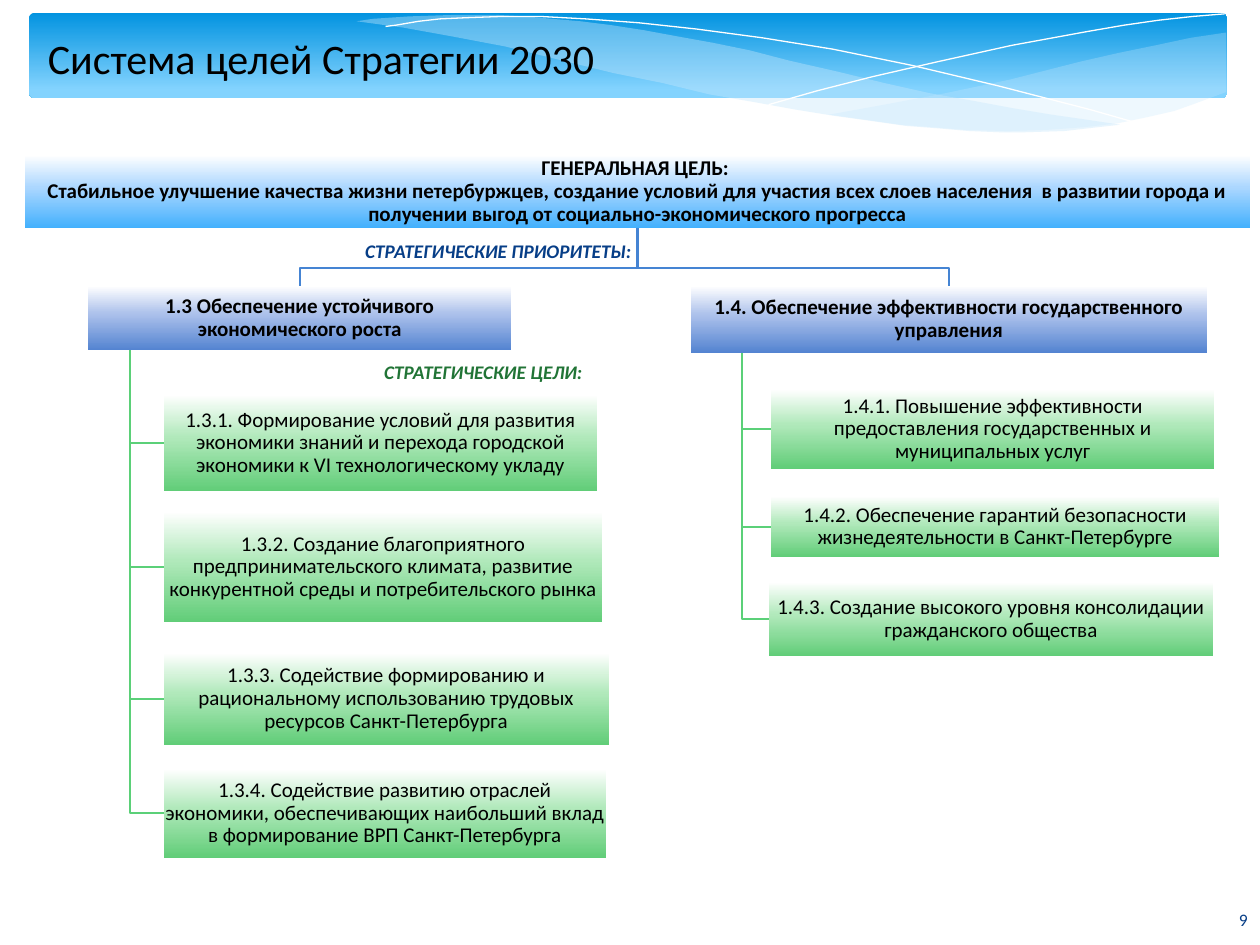
import pptx
import pptx.util
import pptx.oxml
import pptx.oxml.ns
import pptx.dml.color
import pptx.enum.shapes
import pptx.enum.text
import lxml.etree

Pt = pptx.util.Pt
color = pptx.dml.color.RGBColor.from_string
qn = pptx.oxml.ns.qn
ALIGN = pptx.enum.text.PP_ALIGN
ANCHOR = pptx.enum.text.MSO_ANCHOR
SHAPE = pptx.enum.shapes.MSO_SHAPE

presentation = pptx.Presentation()
presentation.slide_width = Pt(720)
presentation.slide_height = Pt(540)
slide = presentation.slides.add_slide(presentation.slide_layouts[6])


def add_outline(points, closed=False):
    corners = [(Pt(x), Pt(y)) for x, y in points]
    builder = slide.shapes.build_freeform(*corners[0])
    builder.add_line_segments(corners[1:], close=closed)
    shape = builder.convert_to_shape()
    shape.shadow.inherit = False
    shape.fill.background()
    shape.line.fill.background()
    return shape


def add_gradient_box(kind, box, stops):
    shape = slide.shapes.add_shape(kind, *[Pt(value) for value in box])
    shape.shadow.inherit = False
    shape.line.fill.background()
    shape.fill.gradient()
    shape.fill.gradient_angle = 270
    stop_list = shape._element.spPr.find(".//" + qn("a:gsLst"))
    for stop in list(stop_list):
        stop_list.remove(stop)
    for position, hex_color in stops:
        stop = lxml.etree.SubElement(stop_list, qn("a:gs"), pos=str(position * 1000))
        lxml.etree.SubElement(stop, qn("a:srgbClr"), val=hex_color)
    return shape


header = add_gradient_box(SHAPE.ROUNDED_RECTANGLE, (16.6, 7.2, 684.7, 49),
                          [(0, "0293E0"), (90, "83D3FE")])
header.adjustments[0] = 0.07

right_wave = [
    (699.8, 18.7), (680.4, 21.6), (660.2, 25.9), (639.4, 30.2), (617, 35.3), (577.4, 45.4),
    (540, 53.3), (505.4, 59.8), (473.8, 65.5), (494.6, 68.4), (514.8, 71.3), (533.5, 72.7),
    (551.5, 74.2), (576, 74.9), (598.3, 74.2), (619.2, 72.7), (637.9, 70.6), (655.2, 67),
    (671, 63.4), (681.1, 59.8), (700.6, 52.6), (700.6, 18.7)]
long_wave = [
    (640, 71.3), (620.6, 68.4), (600.5, 65.5), (578.9, 61.9), (555.8, 57.6), (531.4, 53.3),
    (505.4, 47.5), (478.8, 41), (450.7, 34.6), (428.4, 28.8), (407.5, 24.5), (387.4, 20.9),
    (367.9, 17.3), (349.2, 14.4), (331.9, 12.2), (315.4, 10.8), (300.2, 9.4), (285.1, 8.6),
    (257.8, 8.6), (234, 9.4), (213.1, 10.8), (203.8, 12.2), (230.4, 15.8), (258.5, 20.9),
    (288.7, 26.6), (321.1, 34.6), (350.6, 41.8), (378.7, 47.5), (405.4, 54), (430.6, 58.3),
    (454.3, 62.6), (476.6, 66.2), (497.5, 69.1), (517.7, 72), (536.4, 73.4), (553.7, 74.9),
    (571, 75.6), (586.1, 75.6), (608.4, 74.9), (621.4, 73.4)]
for points, opacity in [(right_wave, 29), (long_wave, 40)]:
    wave = add_outline(points, closed=True)
    wave.fill.solid()
    wave.fill.fore_color.rgb = color("C6E7FC")
    fill_color = wave._element.spPr.find(qn("a:solidFill")).find(qn("a:srgbClr"))
    lxml.etree.SubElement(fill_color, qn("a:alpha"), val=str(opacity * 1000))

falling_line = [
    (220.3, 15.1), (226.1, 14.4), (239, 12.2), (251.3, 10.8), (267.1, 10.1), (286.6, 9.4),
    (308.9, 9.4), (334.8, 10.8), (365, 13), (398.2, 16.6), (435.6, 21.6), (475.9, 28.1),
    (521.3, 37.4), (570.2, 49), (622.8, 62.6), (650.9, 70.6)]
rising_line = [
    (439.2, 59.8), (467.3, 51.8), (498.2, 43.9), (535.7, 35.3), (578.2, 25.9),
    (621.4, 18), (642.2, 14.4), (662.4, 11.5), (681.8, 9.4), (699.8, 7.9)]
lines = [(falling_line, "FFFFFF", 0), (rising_line, "FFFFFF", 0)]

main_box = (14.4, 88.6, 699.8, 41.8)
main_text = ("ГЕНЕРАЛЬНАЯ ЦЕЛЬ: \vСтабильное улучшение качества жизни петербуржцев, "
             "создание условий для участия всех слоев населения  в развитии города и "
             "получении выгод от социально-экономического прогресса")
priorities = [
    ((50.4, 163.4, 241.9, 36.7), "1.3 Обеспечение устойчивого экономического роста", 74.2, [
        ((93.6, 225.4, 247.7, 55.4), "1.3.1. Формирование условий для развития экономики "
         "знаний и перехода городской экономики к VI технологическому укладу"),
        ((93.6, 292.3, 250.6, 63.4), "1.3.2. Создание благоприятного предпринимательского "
         "климата, развитие конкурентной среды и потребительского рынка"),
        ((93.6, 373, 254.2, 52.6), "1.3.3. Содействие формированию и рациональному "
         "использованию трудовых ресурсов Санкт-Петербурга"),
        ((93.6, 439.2, 252.7, 51.1), "1.3.4. Содействие развитию отраслей экономики, "
         "обеспечивающих наибольший вклад в формирование ВРП Санкт-Петербурга")]),
    ((394.6, 163.4, 295.2, 38.2),
     "1.4. Обеспечение эффективности государственного управления", 424.1, [
        ((440.6, 222.5, 253.4, 45.4), "1.4.1. Повышение эффективности предоставления "
         "государственных и муниципальных услуг"),
        ((440.6, 283.7, 256.3, 34.6), "1.4.2. Обеспечение гарантий безопасности "
         "жизнедеятельности в Санкт-Петербурге"),
        ((439.2, 332.6, 254.2, 42.5), "1.4.3. Создание высокого уровня консолидации "
         "гражданского общества")])]

blue = [(0, "FFFFFF"), (44, "ABC0EB"), (100, "5484D1")]
green = [(0, "FFFFFF"), (44, "B1E9BB"), (100, "61CD78")]
boxes = [(main_box, main_text, True, [(0, "FFFFFF"), (44, "ACD7FF"), (100, "42B0FD")])]
main_center = main_box[0] + main_box[2] / 2
main_bottom = main_box[1] + main_box[3]
for box, text, trunk, goals in priorities:
    left, top, width, height = box
    center = left + width / 2
    lines.append(([(main_center, main_bottom), (main_center, 153.4),
                   (center, 153.4), (center, top)], "4584D3", 1.25))
    boxes.append((box, text, True, blue))
    for goal_box, goal_text in goals:
        middle = goal_box[1] + goal_box[3] / 2
        lines.append(([(trunk, top + height), (trunk, middle), (goal_box[0], middle)],
                      "5BD078", 1.25))
        boxes.append((goal_box, goal_text, False, green))

for points, hex_color, width in lines:
    line = add_outline(points).line
    line.color.rgb = color(hex_color)
    line.width = Pt(width)

texts = []
for box, text, bold, stops in boxes:
    shape = add_gradient_box(SHAPE.RECTANGLE, box, stops)
    frame = shape.text_frame
    frame.word_wrap = True
    frame.margin_left = frame.margin_right = Pt(0.7)
    frame.margin_top = frame.margin_bottom = Pt(0.7)
    frame.vertical_anchor = ANCHOR.MIDDLE
    texts.append((frame, text, 12, "000000", bold, False, ALIGN.CENTER, 0.9))

labels = [
    ((20.2, 15.1, 344.2, 36), "Система целей Стратегии 2030", 24, "000000", False, ALIGN.LEFT),
    ((201.6, 133.2, 171.4, 20.9), "СТРАТЕГИЧЕСКИЕ ПРИОРИТЕТЫ:", 11, "073E87", True, ALIGN.LEFT),
    ((212.4, 202.3, 131, 20.9), "СТРАТЕГИЧЕСКИЕ ЦЕЛИ:", 11, "217436", True, ALIGN.LEFT),
    ((628.6, 511.2, 91.4, 28.8), "9", 10, "073E87", False, ALIGN.RIGHT)]
for box, text, size, hex_color, emphasis, alignment in labels:
    frame = slide.shapes.add_textbox(*[Pt(value) for value in box]).text_frame
    frame.word_wrap = alignment == ALIGN.RIGHT
    if frame.word_wrap:
        frame.vertical_anchor = ANCHOR.MIDDLE
    texts.append((frame, text, size, hex_color, emphasis, emphasis, alignment, 1.0))

for frame, text, size, hex_color, bold, italic, alignment, spacing in texts:
    frame.text = text
    paragraph = frame.paragraphs[0]
    paragraph.alignment = alignment
    paragraph.line_spacing = spacing
    for run in paragraph.runs:
        run.font.name = "Calibri"
        run.font.size = Pt(size)
        run.font.bold = bold
        run.font.italic = italic
        run.font.color.rgb = color(hex_color)

presentation.save("out.pptx")
